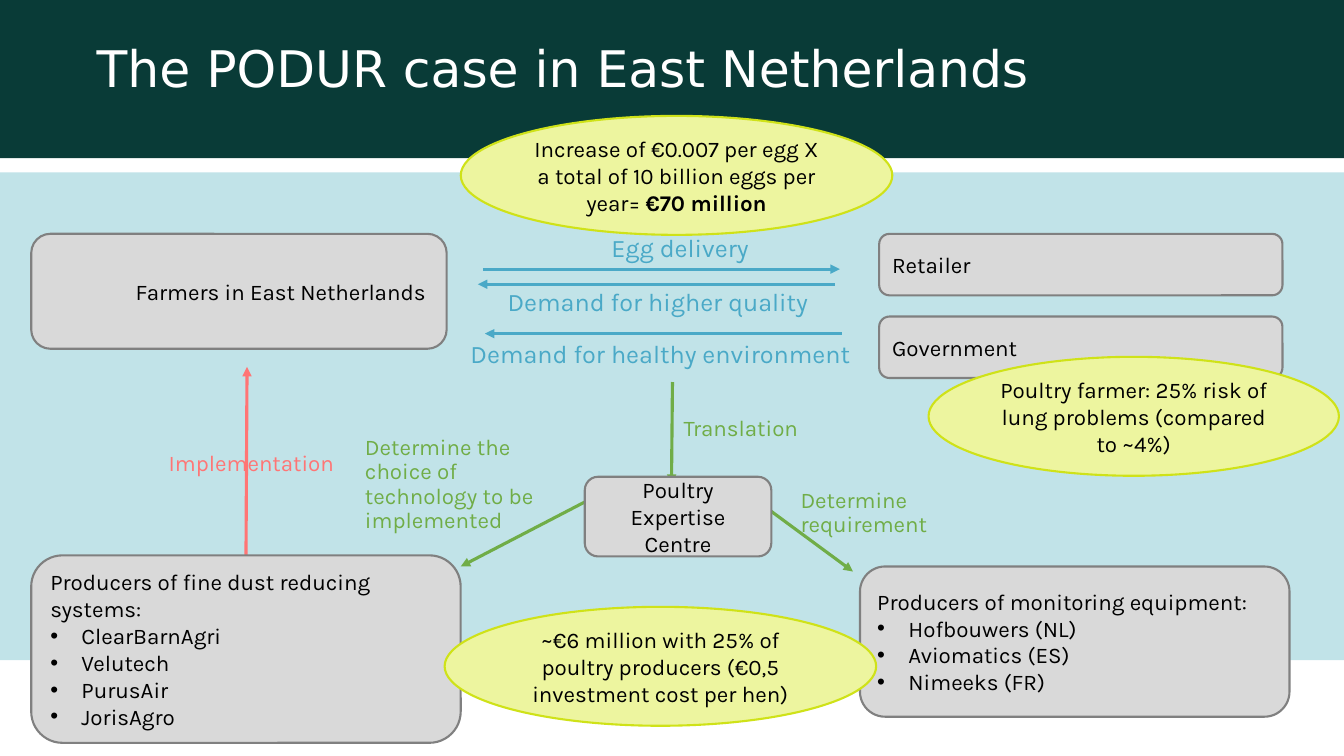
from lxml import etree
from pptx import Presentation
from pptx.dml.color import RGBColor
from pptx.enum import shapes, text
from pptx.oxml import ns
from pptx.util import Inches, Pt

WHITE = RGBColor(0xFF, 0xFF, 0xFF)
BLACK = RGBColor(0x00, 0x00, 0x00)
DARK_TEAL = RGBColor(0x09, 0x3B, 0x37)
PALE_BLUE = RGBColor(0xC1, 0xE3, 0xE8)
LIGHT_GRAY = RGBColor(0xD9, 0xD9, 0xD9)
GRAY = RGBColor(0x80, 0x80, 0x80)
PALE_LIME = RGBColor(0xED, 0xF5, 0x9F)
LIME = RGBColor(0xCF, 0xE2, 0x18)
BLUE = RGBColor(0x4A, 0xA9, 0xC7)
GREEN = RGBColor(0x70, 0xAD, 0x47)
CORAL = RGBColor(0xFF, 0x75, 0x75)

SHAPE = shapes.MSO_SHAPE
LEFT, CENTER, RIGHT = text.PP_ALIGN.LEFT, text.PP_ALIGN.CENTER, text.PP_ALIGN.RIGHT
MIDDLE = text.MSO_ANCHOR.MIDDLE


def format_run(r, size, color, font="Karla", bold=False):
    r.font.size = Pt(size)
    r.font.name = font
    r.font.color.rgb = color
    r.font.bold = bold


def add_panel(s, kind, at, fill, line=None):
    sp = s.shapes.add_shape(kind, *map(Inches, at))
    sp.shadow.inherit = False
    sp.fill.solid()
    sp.fill.fore_color.rgb = fill
    if line is None:
        sp.line.fill.background()
    else:
        sp.line.color.rgb = line
        sp.line.width = Pt(1.5)
    tf = sp.text_frame
    tf.word_wrap = True
    tf.vertical_anchor = MIDDLE
    return tf


def write(p, content, size, color, align=LEFT, font="Karla"):
    p.text = content
    p.alignment = align
    format_run(p.runs[0], size, color, font)


def add_bullet(p):
    pPr = p._p.get_or_add_pPr()
    pPr.set("marL", str(Inches(0.31)))
    pPr.set("indent", str(-Inches(0.31)))
    etree.SubElement(pPr, ns.qn("a:buFont"), typeface="Arial")
    etree.SubElement(pPr, ns.qn("a:buChar"), char="•")


def add_box(s, at, content, align=LEFT, items=()):
    tf = add_panel(s, SHAPE.ROUNDED_RECTANGLE, at, LIGHT_GRAY, GRAY)
    write(tf.paragraphs[0], content, 16, BLACK, align)
    for item in items:
        p = tf.add_paragraph()
        add_bullet(p)
        write(p, item, 16, BLACK)


def add_callout(s, at, content, bold_end=""):
    tf = add_panel(s, SHAPE.OVAL, at, PALE_LIME, LIME)
    p = tf.paragraphs[0]
    write(p, content, 16, BLACK, CENTER)
    if bold_end:
        r = p.add_run()
        r.text = bold_end
        format_run(r, 16, BLACK, bold=True)


def add_label(s, at, content, color, size=16, align=LEFT):
    tf = s.shapes.add_textbox(*map(Inches, at)).text_frame
    tf.word_wrap = True
    tf.vertical_anchor = MIDDLE
    tf.margin_left = tf.margin_right = Inches(0.05)
    tf.margin_top = tf.margin_bottom = Inches(0.05)
    p = tf.paragraphs[0]
    write(p, content, size, color, align)
    p.line_spacing = 0.9


def add_arrow(s, start, end, color):
    line = s.shapes.add_connector(
        shapes.MSO_CONNECTOR.STRAIGHT, *map(Inches, start + end))
    line.line.color.rgb = color
    line.line.width = Pt(2.25)
    etree.SubElement(line.line._get_or_add_ln(), ns.qn("a:tailEnd"), type="triangle")
    etree.SubElement(line._element.spPr, ns.qn("a:effectLst"))


def add_title(s, content):
    tf = s.shapes.add_textbox(
        Inches(0.86), Inches(0.39), Inches(11.92), Inches(1.09)).text_frame
    tf.word_wrap = True
    p = tf.paragraphs[0]
    write(p, content, 36, WHITE, font="DejaVu Sans")
    p.line_spacing = 0.9


def add_arrows(s):
    add_arrow(s, (2.44, 5.51), (2.45, 3.64), CORAL)
    add_arrow(s, (4.79, 2.67), (8.33, 2.67), BLUE)
    add_arrow(s, (8.28, 2.82), (4.74, 2.82), BLUE)
    add_arrow(s, (8.35, 3.31), (4.81, 3.31), BLUE)
    add_arrow(s, (6.67, 3.79), (6.66, 4.8), GREEN)
    add_arrow(s, (6.07, 4.84), (4.57, 5.62), GREEN)
    add_arrow(s, (7.32, 4.83), (8.46, 5.67), GREEN)


def add_boxes(s):
    add_box(s, (0.31, 2.32, 4.12, 1.14), "Farmers in East Netherlands ", RIGHT)
    add_box(s, (8.72, 2.32, 4, 0.61), "Retailer")
    add_box(s, (8.72, 3.14, 4, 0.61), "Government")
    add_box(s, (5.8, 4.73, 1.85, 0.79), "Poultry Expertise Centre", CENTER)
    add_box(s, (0.31, 5.51, 4.26, 1.86), "Producers of fine dust reducing systems:",
            items=("ClearBarnAgri", "Velutech", "PurusAir", "JorisAgro"))
    add_box(s, (8.53, 5.62, 4.26, 1.49), "Producers of monitoring equipment:",
            items=("Hofbouwers (NL)", "Aviomatics (ES)", "Nimeeks (FR)"))


def add_labels(s):
    add_label(s, (4.66, 2.33, 4.17, 0.28), "Egg delivery", BLUE, 18, CENTER)
    add_label(s, (4.91, 2.87, 3.23, 0.28), "Demand for higher quality", BLUE, 18, CENTER)
    add_label(s, (4.18, 3.41, 4.74, 0.23), "Demand for healthy environment", BLUE, 18, CENTER)
    add_label(s, (1.59, 4.47, 1.86, 0.28), "Implementation ", CORAL, align=CENTER)
    add_label(s, (6.73, 4.12, 2.05, 0.28), "Translation", GREEN)
    add_label(s, (3.57, 4.54, 2.12, 0.54),
              "Determine the choice of technology to be implemented", GREEN)
    add_label(s, (7.89, 4.95, 1.97, 0.28), "Determine requirement", GREEN)


def add_callouts(s):
    add_callout(s, (9.21, 3.54, 4.07, 1.18),
                "Poultry farmer: 25% risk of lung problems (compared to ~4%)")
    add_callout(s, (4.57, 1.15, 4.28, 1.18),
                "Increase of €0.007 per egg X a total of 10 billion eggs per year= ",
                "€70 million")
    add_callout(s, (4.41, 6.02, 4.28, 1.18),
                "~€6 million with 25% of poultry producers (€0,5 investment cost per hen)")


def main():
    prs = Presentation()
    prs.slide_width, prs.slide_height = Inches(13.33), Inches(7.5)
    s = prs.slides.add_slide(prs.slide_layouts[6])
    add_panel(s, SHAPE.RECTANGLE, (0, 1.71, 13.33, 4.84), PALE_BLUE)
    add_panel(s, SHAPE.RECTANGLE, (0, 0, 13.33, 1.57), DARK_TEAL)
    add_title(s, "The PODUR case in East Netherlands")
    add_arrows(s)
    add_boxes(s)
    add_labels(s)
    add_callouts(s)
    prs.save("out.pptx")


if __name__ == "__main__":
    main()
